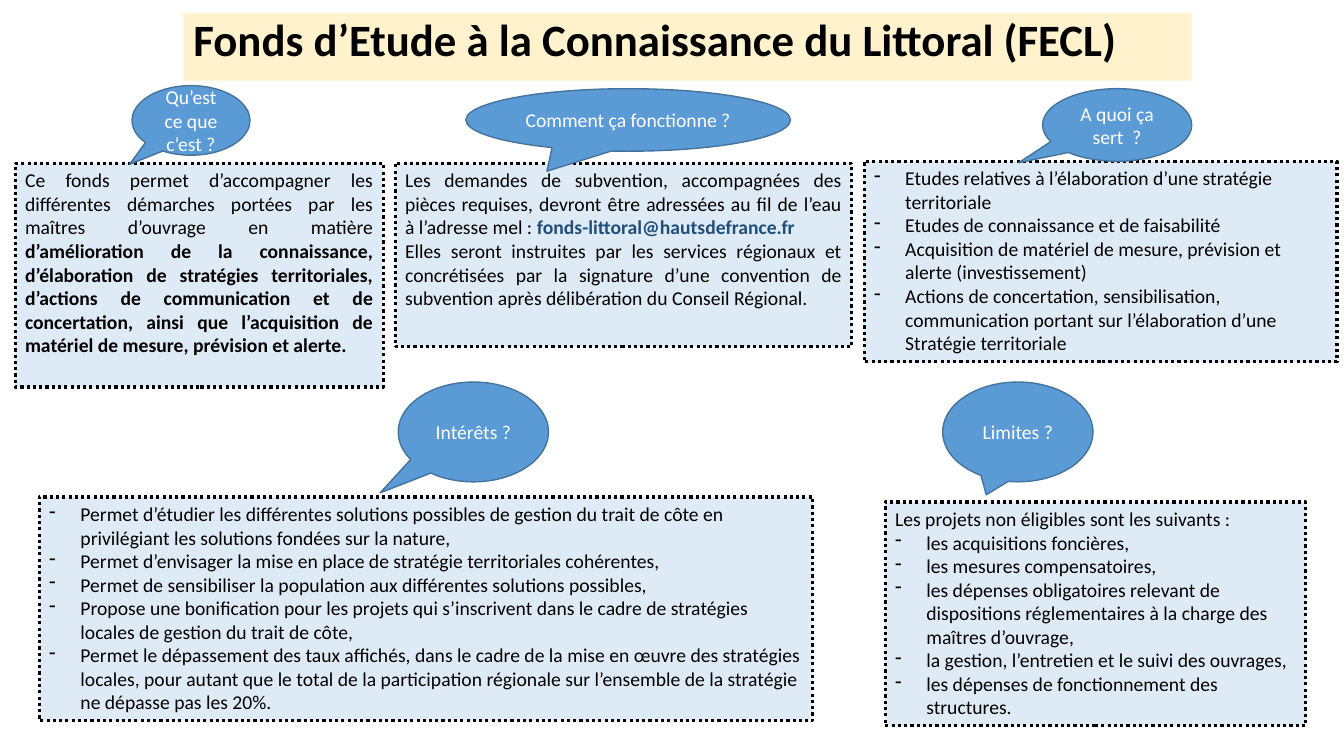
from dataclasses import dataclass

from lxml.etree import SubElement
from pptx import Presentation
from pptx.dml.color import RGBColor
from pptx.enum.dml import MSO_LINE
from pptx.enum.shapes import MSO_SHAPE
from pptx.enum.text import MSO_ANCHOR, PP_ALIGN
from pptx.oxml.ns import qn
from pptx.util import Inches, Pt


@dataclass(frozen=True)
class Theme:
    font: str = "Calibri"
    title_size: int = 32
    body_size: int = 14
    ink: str = "000000"
    title_fill: str = "FFF2CC"
    panel_fill: str = "DEEBF7"
    bubble_fill: str = "5B9BD5"
    bubble_line: str = "43739E"
    bubble_ink: str = "FFFFFF"
    address_ink: str = "1F4E79"


THEME = Theme()
DASH_INDENT = Inches(0.31)


def write(paragraph, text, size=THEME.body_size, color=THEME.ink, bold=False):
    run = paragraph.add_run()
    run.text = text
    run.font.name = THEME.font
    run.font.size = Pt(size)
    run.font.bold = bold
    run.font.color.rgb = RGBColor.from_string(color)


def add_dash(paragraph):
    properties = paragraph._p.get_or_add_pPr()
    properties.set("marL", str(DASH_INDENT))
    properties.set("indent", str(-DASH_INDENT))
    SubElement(properties, qn("a:buFontTx"))
    SubElement(properties, qn("a:buChar")).set("char", "-")


class FundSlide:
    def __init__(self, slide, theme):
        self.slide = slide
        self.theme = theme

    def block(self, preset, box, fill, anchor=MSO_ANCHOR.TOP):
        shape = self.slide.shapes.add_shape(preset, *map(Inches, box))
        shape.shadow.inherit = False
        shape.fill.solid()
        shape.fill.fore_color.rgb = RGBColor.from_string(fill)
        shape.text_frame.word_wrap = True
        shape.text_frame.vertical_anchor = anchor
        return shape

    def outline(self, shape, color, width):
        shape.line.color.rgb = RGBColor.from_string(color)
        shape.line.width = Pt(width)

    def title(self, box, text):
        banner = self.block(MSO_SHAPE.RECTANGLE, box, self.theme.title_fill)
        banner.line.fill.background()
        heading = banner.text_frame.paragraphs[0]
        heading.alignment = PP_ALIGN.LEFT
        heading.line_spacing = 0.9
        write(heading, text, size=self.theme.title_size, bold=True)

    def panel(self, box, prose=(), dashes=(), align=PP_ALIGN.LEFT):
        panel = self.block(MSO_SHAPE.RECTANGLE, box, self.theme.panel_fill)
        self.outline(panel, self.theme.ink, 2.25)
        panel.line.dash_style = MSO_LINE.ROUND_DOT
        frame = panel.text_frame
        dashed = [[(item, {})] for item in dashes]
        for index, parts in enumerate([*prose, *dashed]):
            paragraph = frame.add_paragraph() if index else frame.paragraphs[0]
            paragraph.alignment = align
            if index >= len(prose):
                add_dash(paragraph)
            for text, style in parts:
                write(paragraph, text, **style)

    def bubble(self, box, tail, question):
        bubble = self.block(MSO_SHAPE.OVAL_CALLOUT, box,
                            self.theme.bubble_fill, MSO_ANCHOR.MIDDLE)
        self.outline(bubble, self.theme.bubble_line, 1)
        for index, offset in enumerate(tail):
            bubble.adjustments[index] = offset
        paragraph = bubble.text_frame.paragraphs[0]
        paragraph.alignment = PP_ALIGN.CENTER
        write(paragraph, question, color=self.theme.bubble_ink)


def main():
    deck = Presentation()
    deck.slide_width, deck.slide_height = Inches(13.33), Inches(7.5)
    fund = FundSlide(deck.slides.add_slide(deck.slide_layouts[6]), THEME)

    fund.title((1.82, 0.13, 10, 0.67), "Fonds d’Etude à la Connaissance du Littoral (FECL)")

    fund.panel((0.15, 1.62, 3.65, 2.22), align=PP_ALIGN.JUSTIFY, prose=[[
        ("Ce fonds permet d’accompagner les différentes démarches portées par les "
         "maîtres d’ouvrage en matière ", {}),
        ("d’amélioration de la connaissance, d’élaboration de stratégies territoriales, "
         "d’actions de communication et de concertation, ainsi que l’acquisition de "
         "matériel de mesure, prévision et alerte.", {"bold": True}),
    ]])
    fund.panel((3.92, 1.62, 4.53, 1.82), align=PP_ALIGN.JUSTIFY, prose=[
        [("Les demandes de subvention, accompagnées des pièces requises, devront être "
          "adressées au fil de l’eau à l’adresse mel : ", {}),
         ("fonds-littoral@hautsdefrance.fr", {"color": THEME.address_ink, "bold": True})],
        [("Elles seront instruites par les services régionaux et concrétisées par la "
          "signature d’une convention de subvention après délibération du Conseil "
          "Régional.", {})],
    ])
    fund.panel((8.57, 1.6, 4.69, 1.99), dashes=[
        "Etudes relatives à l’élaboration d’une stratégie territoriale",
        "Etudes de connaissance et de faisabilité",
        "Acquisition de matériel de mesure, prévision et alerte (investissement)",
        "Actions de concertation, sensibilisation, communication portant sur "
        "l’élaboration d’une Stratégie territoriale",
    ])
    fund.panel((0.39, 4.93, 7.67, 2.22), dashes=[
        "Permet d’étudier les différentes solutions possibles de gestion du trait de côte "
        "en privilégiant les solutions fondées sur la nature,",
        "Permet d’envisager la mise en place de stratégie territoriales cohérentes,",
        "Permet de sensibiliser la population aux différentes solutions possibles,",
        "Propose une bonification pour les projets qui s’inscrivent dans le cadre de "
        "stratégies locales de gestion du trait de côte,",
        "Permet le dépassement des taux affichés, dans le cadre de la mise en œuvre des "
        "stratégies locales, pour autant que le total de la participation régionale sur "
        "l’ensemble de la stratégie ne dépasse pas les 20%.",
    ])
    fund.panel((8.78, 4.98, 4.17, 2.22), prose=[
        [("Les projets non éligibles sont les suivants :", {})],
    ], dashes=[
        "les acquisitions foncières,",
        "les mesures compensatoires,",
        "les dépenses obligatoires relevant de dispositions réglementaires à la charge "
        "des maîtres d’ouvrage,",
        "la gestion, l’entretien et le suivi des ouvrages,",
        "les dépenses de fonctionnement des structures.",
    ])

    for box, tail, question in [
        ((1.31, 0.85, 1.17, 0.69), (-0.52, 0.63), "Qu’est ce que c’est ?"),
        ((4.62, 0.88, 3.22, 0.62), (-0.25, 0.82), "Comment ça fonctionne ?"),
        ((10.34, 0.88, 1.48, 0.72), (-0.66, 0.52), "A quoi ça sert  ?"),
        ((9.35, 3.79, 1.49, 0.99), (-0.21, 0.63), "Limites ?"),
        ((3.95, 3.79, 1.49, 0.99), (-0.62, 0.61), "Intérêts ?"),
    ]:
        fund.bubble(box, tail, question)

    deck.save("out.pptx")


if __name__ == "__main__":
    main()
